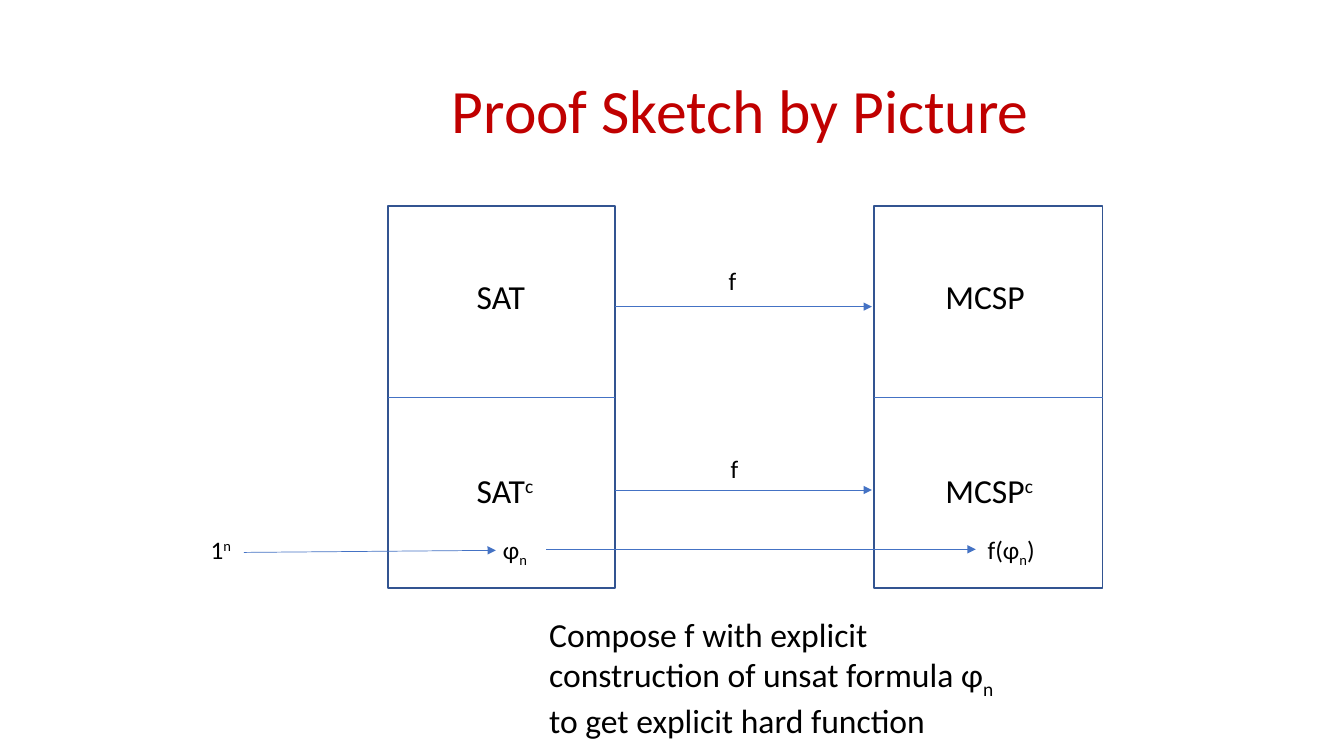
import pptx
import pptx.util
import pptx.dml.color
import pptx.enum.shapes
import pptx.enum.text
import pptx.oxml
import pptx.oxml.ns
from pptx.util import Pt

SUPER, SUB = 30000, -25000
ARROW_BLUE = "4472C4"


def add_label(left, top, width, height, parts, size=24, color="000000"):
    label = slide.shapes.add_textbox(Pt(left), Pt(top), Pt(width), Pt(height))
    label.text_frame.word_wrap = True
    for text, baseline in parts:
        run = label.text_frame.paragraphs[0].add_run()
        run.text = text
        run.font.name = "Calibri"
        run.font.size = Pt(size)
        run.font.color.rgb = pptx.dml.color.RGBColor.from_string(color)
        if baseline:
            run.font._element.set("baseline", str(baseline))
    return label.text_frame


def add_line(x1, y1, x2, y2, arrow):
    line = slide.shapes.add_connector(
        pptx.enum.shapes.MSO_CONNECTOR.STRAIGHT, Pt(x1), Pt(y1), Pt(x2), Pt(y2))
    line.line.color.rgb = pptx.dml.color.RGBColor.from_string(ARROW_BLUE)
    line.line.width = Pt(0.5)
    properties = line._element.spPr
    if arrow:
        head = pptx.oxml.ns.qn("a:tailEnd")
        properties.find(pptx.oxml.ns.qn("a:ln")).append(
            properties.makeelement(head, {"type": "triangle"}))
    properties.append(properties.makeelement(pptx.oxml.ns.qn("a:effectLst"), {}))


deck = pptx.Presentation()
deck.slide_width, deck.slide_height = Pt(960), Pt(540)
slide = deck.slides.add_slide(deck.slide_layouts[6])

title = add_label(130, 28.8, 798, 104.4, [("Proof Sketch by Picture", 0)], 44, "C00000")
title.vertical_anchor = pptx.enum.text.MSO_ANCHOR.MIDDLE
title.paragraphs[0].alignment = pptx.enum.text.PP_ALIGN.CENTER
title.paragraphs[0].line_spacing = 0.9

box_top, box_height = 147, 273
problems = [("SAT", 277.2, 162, 333.4, 80), ("MCSP", 624.2, 163.4, 668.2, 100)]
for problem, left, width, label_left, label_width in problems:
    box = slide.shapes.add_shape(
        pptx.enum.shapes.MSO_SHAPE.RECTANGLE, Pt(left), Pt(box_top), Pt(width), Pt(box_height))
    box.shadow.inherit = False
    box.fill.solid()
    box.fill.fore_color.rgb = pptx.dml.color.RGBColor.from_string("FFFFFF")
    box.line.color.rgb = pptx.dml.color.RGBColor.from_string("325491")
    box.line.width = Pt(1)
    middle = box_top + box_height / 2
    add_line(left, middle, left + width, middle, False)
    add_label(label_left, 193.7, label_width, 36, [(problem, 0)])
    add_label(label_left, 332, label_width, 36, [(problem, 0), ("c", SUPER)])

for arrow_y, f_left, f_top in [(219, 513.4, 185.8), (350, 514.8, 320.4)]:
    add_line(439.2, arrow_y, 622.8, arrow_y, True)
    add_label(f_left, f_top, 36, 29, [("f", 0)], 18)

add_line(174.2, 394.6, 354.2, 393.1, True)
add_line(390.2, 392.4, 697, 392.4, True)
instances = [
    (143.3, 39.6, [("1", 0), ("n", SUPER)]),
    (352.1, 37.4, [("φ", 0), ("n", SUB)]),
    (698.4, 58.3, [("f(φ", 0), ("n", SUB), (")", 0)]),
]
for left, width, parts in instances:
    add_label(left, 378, width, 29, parts, 18)

add_label(385.2, 434.9, 355, 94.5, [
    ("Compose f with explicit construction of unsat formula φ", 0),
    ("n", SUB),
    (" to get explicit hard function", 0),
])

deck.save("out.pptx")
